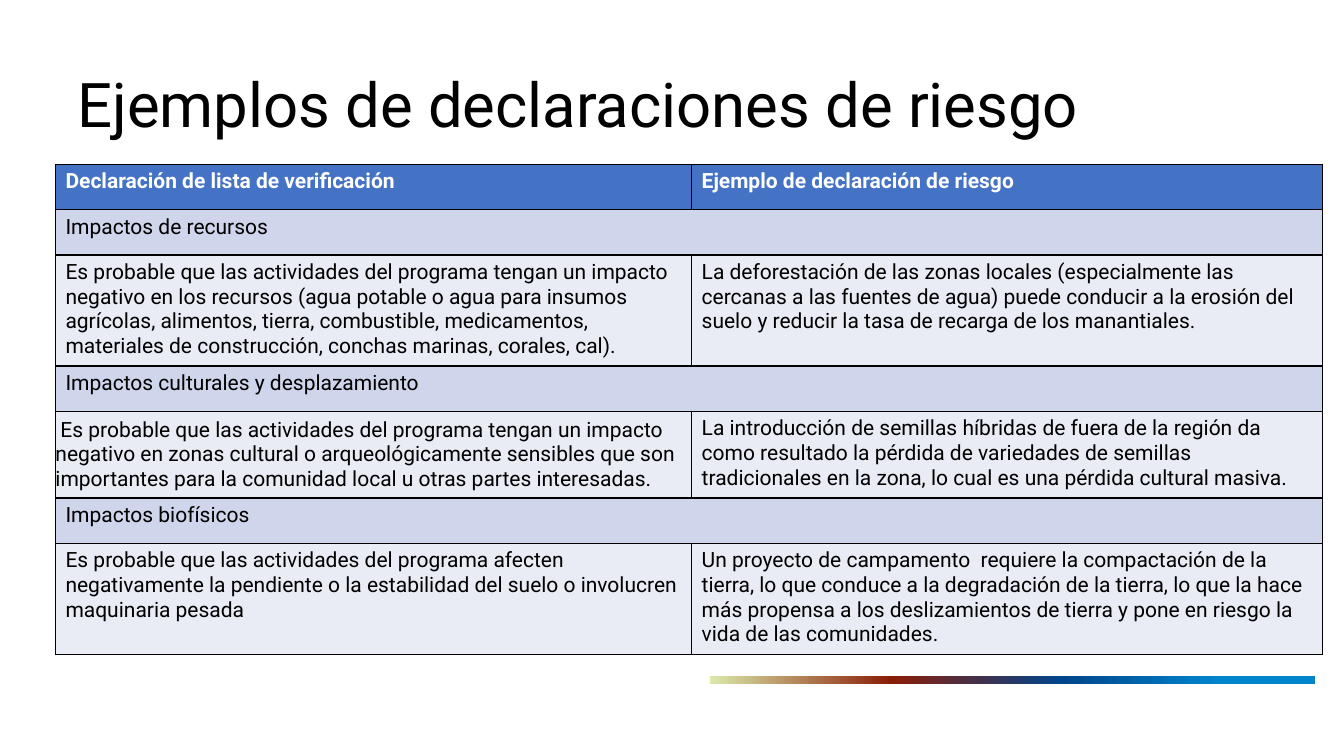
import pptx
import pptx.util
import pptx.dml.color
import pptx.enum.shapes
import pptx.enum.text
import pptx.oxml
import pptx.oxml.ns

EMU_PER_PX = 9144
FONT = "Roboto"
COLORS = {
    "black": "000000",
    "white": "FFFFFF",
    "header": "4472C4",
    "section": "CFD5EA",
    "body": "E9EBF5",
}
STRIPE_STOPS = [(0, "DBE9AA"), (30, "8A1D06"), (58, "00448B"), (84, "0084CC")]
COLUMN_WIDTHS = [631, 626]
SHORT_ROW = 45
HEADERS = ["Declaración de lista de verificación", "Ejemplo de declaración de riesgo"]
SECTIONS = [
    (
        "Impactos de recursos",
        102,
        "Es probable que las actividades del programa tengan un impacto negativo en los "
        "recursos (agua potable o agua para insumos agrícolas, alimentos, tierra, "
        "combustible, medicamentos, materiales de construcción, conchas marinas, corales, cal).",
        "La deforestación de las zonas locales (especialmente las cercanas a las fuentes de "
        "agua) puede conducir a la erosión del suelo y reducir la tasa de recarga de los "
        "manantiales.",
    ),
    (
        "Impactos culturales y desplazamiento",
        86,
        "Es probable que las actividades del programa tengan un impacto negativo en zonas "
        "cultural o arqueológicamente sensibles que son importantes para la comunidad local "
        "u otras partes interesadas.",
        "La introducción de semillas híbridas de fuera de la región da como resultado la "
        "pérdida de variedades de semillas tradicionales en la zona, lo cual es una pérdida "
        "cultural masiva.",
    ),
    (
        "Impactos biofísicos",
        102,
        "Es probable que las actividades del programa afecten negativamente la pendiente o "
        "la estabilidad del suelo o involucren maquinaria pesada",
        "Un proyecto de campamento  requiere la compactación de la tierra, lo que conduce a "
        "la degradación de la tierra, lo que la hace más propensa a los deslizamientos de "
        "tierra y pone en riesgo la vida de las comunidades.",
    ),
]


def px(n):
    return pptx.util.Emu(n * EMU_PER_PX)


def rgb(name):
    return pptx.dml.color.RGBColor.from_string(COLORS[name])


def parse_xml(tag, inner, attributes=""):
    namespace = pptx.oxml.ns.nsdecls("a")
    return pptx.oxml.parse_xml(f"<a:{tag} {namespace} {attributes}>{inner}</a:{tag}>")


def write_text(tf, text, size, color, bold=False):
    tf.text = text
    p = tf.paragraphs[0]
    for r in p.runs:
        r.font.name = FONT
        r.font.size = pptx.util.Pt(size)
        r.font.bold = bold
        r.font.color.rgb = rgb(color)
    return p


def add_stripe(s, left, top, width, height):
    sp = s.shapes.add_shape(
        pptx.enum.shapes.MSO_SHAPE.RECTANGLE, px(left), px(top), px(width), px(height)
    )
    sp.shadow.inherit = False
    sp.line.fill.background()
    sp.fill.gradient()
    sp.fill.gradient_angle = 0
    stops = sp._element.spPr.find(".//" + pptx.oxml.ns.qn("a:gsLst"))
    for stop in list(stops):
        stops.remove(stop)
    for percent, color in STRIPE_STOPS:
        stops.append(parse_xml("gs", f'<a:srgbClr val="{color}"/>', f'pos="{percent * 1000}"'))


def add_title(s, text, left, top, width, height):
    sp = s.shapes.add_textbox(px(left), px(top), px(width), px(height))
    tf = sp.text_frame
    tf.word_wrap = True
    tf.vertical_anchor = pptx.enum.text.MSO_ANCHOR.MIDDLE
    p = write_text(tf, text, 44, "black")
    p.line_spacing = 0.9


def style_cell(cell, fill):
    tc_pr = cell._tc.get_or_add_tcPr()
    line = f'<a:solidFill><a:srgbClr val="{COLORS["black"]}"/></a:solidFill>'
    for side in ("lnL", "lnR", "lnT", "lnB"):
        tc_pr.append(parse_xml(side, line, 'w="12700"'))
    cell.fill.solid()
    cell.fill.fore_color.rgb = rgb(fill)


def fill_row(table, row, height, texts, fill, color="black", bold=False):
    table.rows[row].height = px(height)
    for column, text in enumerate(texts):
        cell = table.cell(row, column)
        style_cell(cell, fill)
        write_text(cell.text_frame, text, 15, color, bold)


def remove_margins(cell):
    cell.margin_left = cell.margin_right = cell.margin_top = cell.margin_bottom = 0
    cell.vertical_anchor = pptx.enum.text.MSO_ANCHOR.MIDDLE
    p = cell.text_frame.paragraphs[0]
    p.space_after = pptx.util.Pt(6)
    p._p.get_or_add_pPr().set("indent", str(px(5)))


def add_risk_table(s, left, top):
    heights = [SHORT_ROW] + [h for section in SECTIONS for h in (SHORT_ROW, section[1])]
    frame = s.shapes.add_table(
        len(heights), len(COLUMN_WIDTHS), px(left), px(top),
        px(sum(COLUMN_WIDTHS)), px(sum(heights)),
    )
    table = frame.table
    for column, width in zip(table.columns, COLUMN_WIDTHS):
        column.width = px(width)
    fill_row(table, 0, SHORT_ROW, HEADERS, "header", "white", True)
    for i, (heading, height, statement, example) in enumerate(SECTIONS):
        row = 1 + 2 * i
        fill_row(table, row, SHORT_ROW, [heading, ""], "section")
        table.cell(row, 0).merge(table.cell(row, 1))
        fill_row(table, row + 1, height, [statement, example], "body")
    remove_margins(table.cell(4, 0))


def main():
    prs = pptx.Presentation()
    prs.slide_width = px(1333)
    prs.slide_height = px(750)
    s = prs.slides.add_slide(prs.slide_layouts[6])
    add_stripe(s, 704, 671, 600, 8)
    add_title(s, "Ejemplos de declaraciones de riesgo", 67, 34, 1150, 145)
    add_risk_table(s, 55, 163)
    prs.save("out.pptx")


if __name__ == "__main__":
    main()
